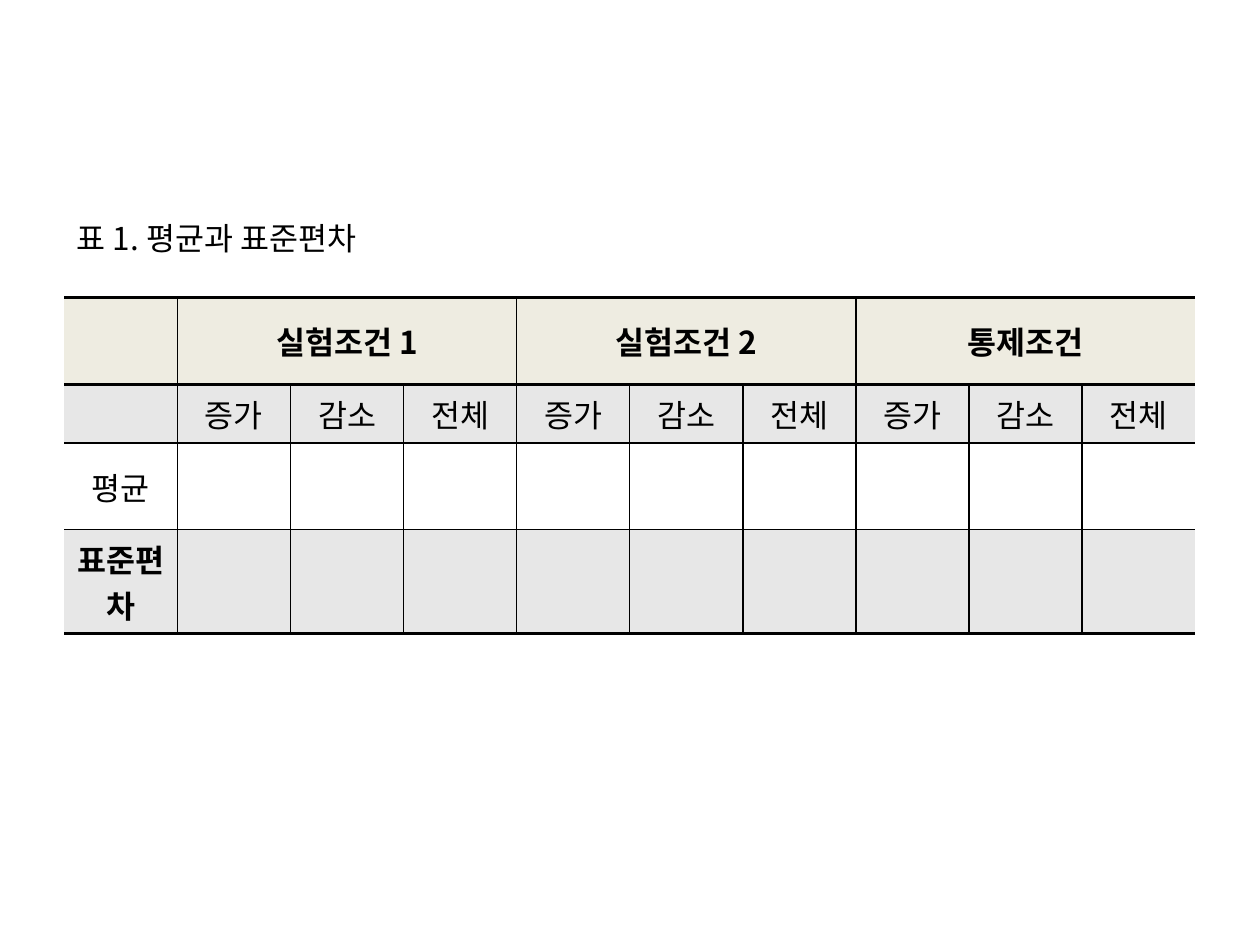
from dataclasses import dataclass

from lxml import etree
from pptx import Presentation
from pptx import util as u
from pptx.dml.color import RGBColor
from pptx.enum import text
from pptx.oxml import ns


@dataclass(frozen=True)
class Theme:
    font: str = "Noto Sans CJK KR"
    size: float = 18
    ink: str = "000000"
    header: str = "EEECE1"
    band: str = "E7E7E7"
    plain: str = "FFFFFF"
    thin: float = 1
    thick: float = 2


def write(frame, content, theme, bold=False, align=text.PP_ALIGN.LEFT):
    """Put one formatted paragraph into a text frame."""
    paragraph = frame.paragraphs[0]
    paragraph.alignment = align
    if not content:
        paragraph.font.size = u.Pt(theme.size)
        return
    run = paragraph.add_run()
    run.text = content
    font = run.font
    font.name, font.size, font.bold = theme.font, u.Pt(theme.size), bold
    font.color.rgb = RGBColor.from_string(theme.ink)
    east_asian = etree.SubElement(font._element, ns.qn("a:ea"))
    east_asian.set("typeface", theme.font)


class TableSlide:
    """Lengths are shares of the slide's width and height."""

    def __init__(self, presentation, theme):
        self.theme = theme
        self.width = presentation.slide_width
        self.height = presentation.slide_height
        self.slide = presentation.slides.add_slide(presentation.slide_layouts[5])

    def box(self, left, top, width, height):
        return (int(left * self.width), int(top * self.height),
                int(width * self.width), int(height * self.height))

    def caption(self, content, *area):
        title = self.slide.shapes.title
        title.left, title.top, title.width, title.height = self.box(*area)
        frame = title.text_frame
        frame.word_wrap = True
        frame.auto_size = text.MSO_AUTO_SIZE.NONE
        frame.vertical_anchor = text.MSO_ANCHOR.TOP
        write(frame, content, self.theme)

    def table(self, row_count, column_count, left, top, width, row_heights):
        area = self.box(left, top, width, sum(row_heights))
        table = self.slide.shapes.add_table(row_count, column_count, *area).table
        table.first_row = table.horz_banding = False
        for row, height in zip(table.rows, row_heights):
            row.height = int(height * self.height)
        return table

    def border(self, cell, side, weight):
        """Draw one cell edge; a weight of zero leaves it open."""
        properties = cell._tc.get_or_add_tcPr()
        line = etree.SubElement(properties, ns.qn(f"a:ln{side}"))
        line.set("w", str(u.Pt(weight)))
        if not weight:
            etree.SubElement(line, ns.qn("a:noFill"))
            return
        fill = etree.SubElement(line, ns.qn("a:solidFill"))
        etree.SubElement(fill, ns.qn("a:srgbClr")).set("val", self.theme.ink)

    def cell(self, cell, content, fill, edges, bold=False):
        for side, weight in zip("LRTB", edges):
            self.border(cell, side, weight)
        cell.fill.solid()
        cell.fill.fore_color.rgb = RGBColor.from_string(fill)
        cell.vertical_anchor = text.MSO_ANCHOR.MIDDLE
        write(cell.text_frame, content, self.theme, bold, text.PP_ALIGN.CENTER)


def main():
    theme = Theme()
    presentation = Presentation()
    presentation.slide_width, presentation.slide_height = u.Inches(10), u.Inches(7.5)
    page = TableSlide(presentation, theme)

    # Caption above the table
    page.caption("표 1. 평균과 표준편차", 0.051, 0.225, 0.73, 0.054)

    # Table content: three conditions with three measures each
    conditions = ["실험조건 1", "실험조건 2", "통제조건"]
    measures = ["증가", "감소", "전체"]
    group = len(measures)
    blanks = [""] * (len(conditions) * group)
    header = [""]
    for condition in conditions:
        header += [condition] + [""] * (group - 1)
    rows = [
        (header, theme.header, True),
        ([""] + measures * len(conditions), theme.band, False),
        (["평균"] + blanks, theme.plain, False),
        (["표준편차"] + blanks, theme.band, True),
    ]
    column_count = len(header)
    table = page.table(len(rows), column_count, 0.051, 0.315, 0.898,
                       [0.092, 0.055, 0.092, 0.092])

    # Heavy rules frame the header and close the table; the sides stay open
    rules = [theme.thick, theme.thick, theme.thin, theme.thin, theme.thick]
    for r, (contents, fill, bold) in enumerate(rows):
        uprights = [theme.thin] * (column_count + 1)
        uprights[0] = uprights[-1] = 0
        if r == 0:
            for c in range(2, column_count):
                uprights[c] = theme.thin if c % group == 1 else 0
        for c, content in enumerate(contents):
            edges = (uprights[c], uprights[c + 1], rules[r], rules[r + 1])
            page.cell(table.cell(r, c), content, fill, edges, bold)

    # Each condition spans its measures
    for first in range(1, column_count, group):
        table.cell(0, first).merge(table.cell(0, first + group - 1))
        # The spanning cell carries the group's right-hand edge
        edge = table.cell(0, first)._tc.tcPr.find(ns.qn("a:lnR"))
        last = table.cell(0, first + group - 1)._tc.tcPr.find(ns.qn("a:lnR"))
        edge.getparent().replace(edge, last)

    presentation.save("out.pptx")


if __name__ == "__main__":
    main()
